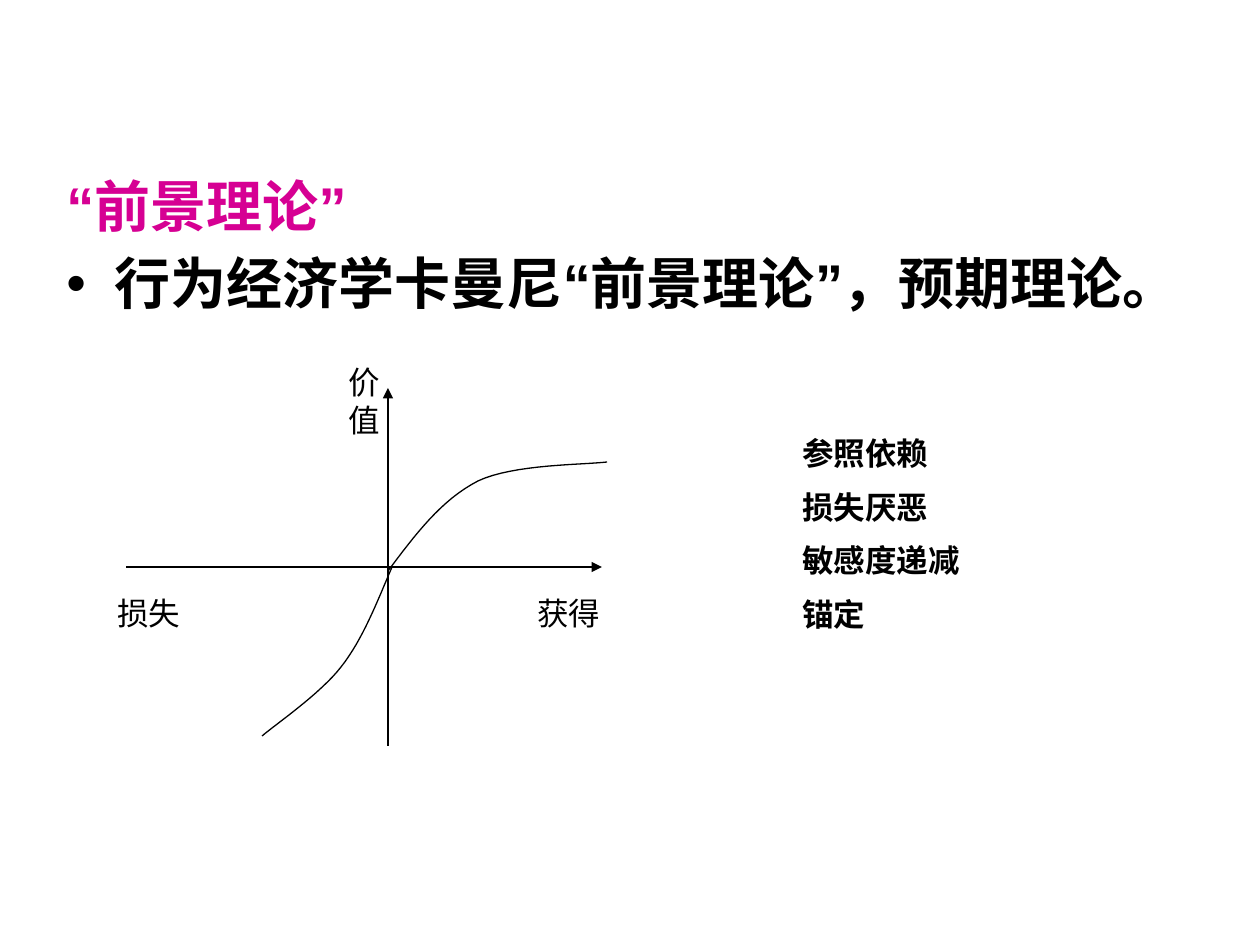
import pptx
import pptx.util
import pptx.dml.color
import pptx.enum.lang
import pptx.enum.shapes
import pptx.enum.text
import pptx.oxml.ns
from lxml import etree

RGB = pptx.dml.color.RGBColor
BLACK = RGB(0x00, 0x00, 0x00)
PINK = RGB(0xD6, 0x00, 0x93)
WHITE = RGB(0xFF, 0xFF, 0xFF)
SCALE = 914400 / 126
INDENT = 48
STEPS = 16


def px(n):
    return pptx.util.Emu(round(n * SCALE))


def sub(parent, tag, **attrs):
    return etree.SubElement(parent, pptx.oxml.ns.qn(tag), attrs)


def add_box(slide, left, top, width, height):
    frame = slide.shapes.add_textbox(px(left), px(top), px(width), px(height)).text_frame
    frame.word_wrap = True
    frame.vertical_anchor = pptx.enum.text.MSO_ANCHOR.TOP
    return frame


def add_line(frame, text, size, face, color=BLACK, bold=False, gap=0, bullet=None):
    """Add one paragraph; only those after the first get the gap."""
    first = not frame.paragraphs[0].runs
    para = frame.paragraphs[0] if first else frame.add_paragraph()
    if bullet is not None:
        props = para._p.get_or_add_pPr()
        props.set("marL", str(px(INDENT)))
        props.set("indent", str(-px(INDENT)))
        if bullet:
            sub(props, "a:buFont", typeface="Arial")
            sub(props, "a:buChar", char=bullet)
        else:
            sub(props, "a:buNone")
    if not first:
        para.space_before = pptx.util.Pt(gap)
    run = para.add_run()
    run.text = text
    font = run.font
    font.size = pptx.util.Pt(size)
    font.bold = bold
    font.color.rgb = color
    font.name = face
    font.language_id = pptx.enum.lang.MSO_LANGUAGE_ID.SIMPLIFIED_CHINESE
    sub(run._r.get_or_add_rPr(), "a:ea", typeface=face)


def set_line(shape):
    shape.line.color.rgb = BLACK
    shape.line.width = pptx.util.Pt(0.75)


def add_axis(slide, x1, y1, x2, y2):
    axis = slide.shapes.add_connector(
        pptx.enum.shapes.MSO_CONNECTOR.STRAIGHT, px(x1), px(y1), px(x2), px(y2))
    set_line(axis)
    sub(axis.line._get_or_add_ln(), "a:tailEnd", type="triangle")
    sub(axis._element.spPr, "a:effectLst")


def bezier(a, b, c, d, t):
    s = 1 - t
    return tuple(s**3 * p + 3 * s * s * t * q + 3 * s * t * t * r + t**3 * e
                 for p, q, r, e in zip(a, b, c, d))


def add_curve(slide, knots):
    """Draw joined cubic curves: a start, then three points per piece."""
    dots = [bezier(*knots[i:i + 4], k / STEPS)
            for i in range(0, len(knots) - 1, 3) for k in range(1, STEPS + 1)]
    pen = slide.shapes.build_freeform(px(knots[0][0]), px(knots[0][1]))
    pen.add_line_segments([(px(x), px(y)) for x, y in dots], close=False)
    shape = pen.convert_to_shape()
    shape.fill.background()
    shape.shadow.inherit = False
    set_line(shape)


def main():
    deck = pptx.Presentation()
    deck.slide_width, deck.slide_height = px(1260), px(945)
    slide = deck.slides.add_slide(deck.slide_layouts[6])
    slide.background.fill.solid()
    slide.background.fill.fore_color.rgb = WHITE

    # Heading and statement
    body = add_box(slide, 54, 165, 1134, 624)
    add_line(body, "“前景理论”", 32, "Arial", PINK, True, bullet="")
    add_line(body, "行为经济学卡曼尼“前景理论”，预期理论。", 32, "Arial",
             bold=True, gap=6, bullet="•")

    # Axes and value curve
    add_axis(slide, 126, 567, 602, 567)
    add_axis(slide, 388, 746, 388, 388)
    add_curve(slide, [(388, 571), (415, 535), (441, 500), (478, 481),
                      (514, 464), (583, 465), (607, 462)])
    add_curve(slide, [(392, 567), (377, 602), (363, 639), (341, 667),
                      (320, 694), (276, 724), (262, 736)])

    # Axis labels
    for text, *place in (("价值", 336, 357, 48, 88),
                         ("损失", 105, 588, 100, 50),
                         ("获得", 525, 588, 129, 50)):
        add_line(add_box(slide, *place), text, 18, "DejaVu Sans")

    # Key ideas
    ideas = add_box(slide, 790, 428, 397, 221)
    for text in ("参照依赖", "损失厌恶", "敏感度递减", "锚定"):
        add_line(ideas, text, 18, "DejaVu Sans", bold=True, gap=9)

    deck.save("out.pptx")


if __name__ == "__main__":
    main()
